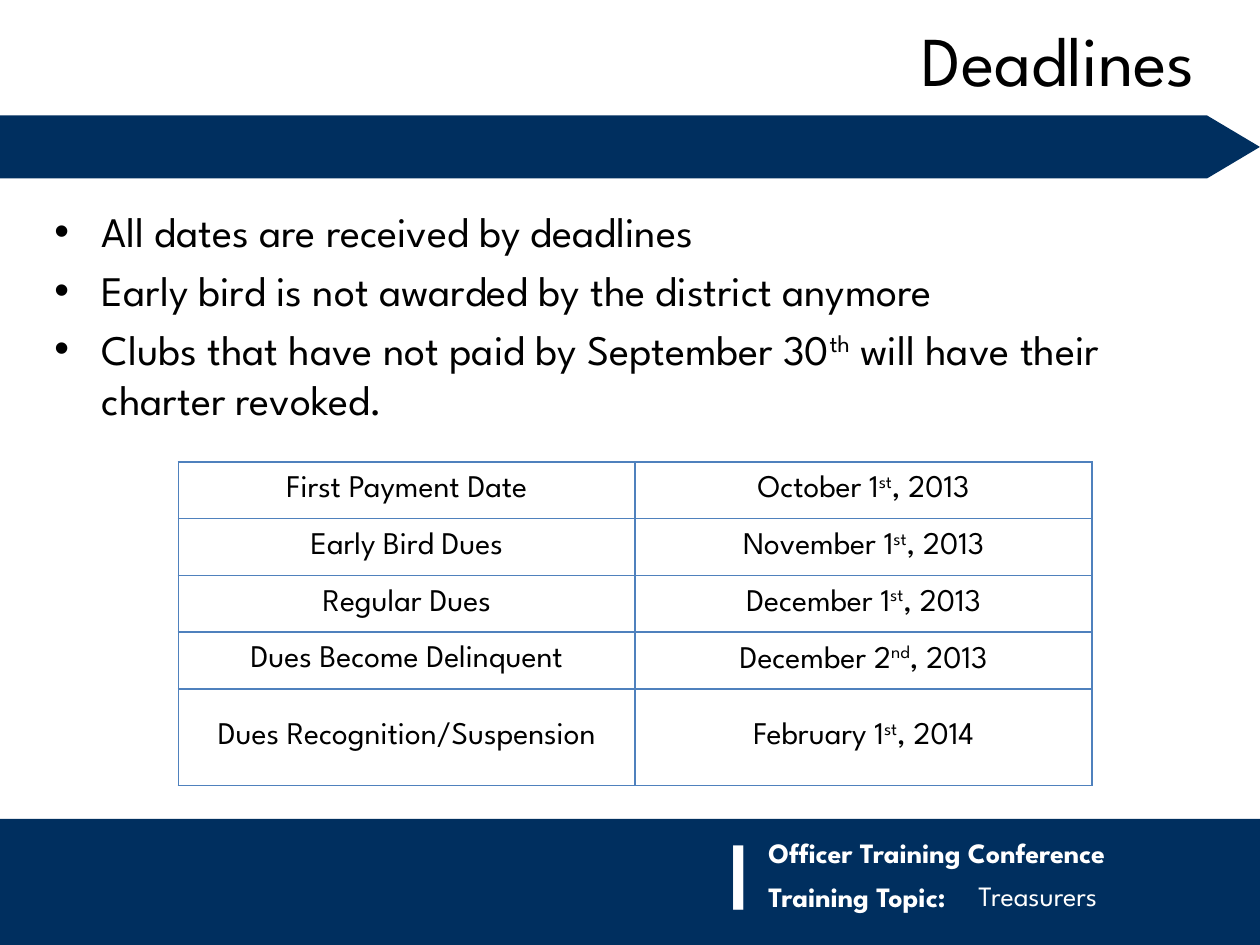
"""Build the treasurers' deadlines slide."""
import pptx
import pptx.dml.color
import pptx.enum.shapes
import pptx.enum.text
import pptx.oxml
import pptx.oxml.ns
import pptx.util

Pt = pptx.util.Pt
ALIGN = pptx.enum.text.PP_ALIGN
ANCHOR = pptx.enum.text.MSO_ANCHOR
SHAPE = pptx.enum.shapes.MSO_SHAPE
NAVY = pptx.dml.color.RGBColor(0x00, 0x2F, 0x5F)
BLUE = pptx.dml.color.RGBColor(0x4F, 0x81, 0xBD)
BLACK = pptx.dml.color.RGBColor(0, 0, 0)
WHITE = pptx.dml.color.RGBColor(255, 255, 255)
FONT = "League Spartan"

TITLE = "Deadlines"
BULLETS = [
    "All dates are received by deadlines",
    "Early bird is not awarded by the district anymore",
    "Clubs that have not paid by September 30^th^ will have their charter revoked.",
]
DEADLINES = [
    ("First Payment Date", "October 1^st^, 2013"),
    ("Early Bird Dues", "November 1^st^, 2013"),
    ("Regular Dues", "December 1^st^, 2013"),
    ("Dues Become Delinquent", "December 2^nd^, 2013"),
    ("Dues Recognition/Suspension", "February 1^st^, 2014"),
]
ROW_HEIGHTS = [32.4] * 4 + [55.4]
COLUMN_WIDTH = 261
BANDS = [
    (SHAPE.PENTAGON, (0, 66, 720, 36)),
    (SHAPE.RECTANGLE, (0, 468, 720, 72)),
]
FOOTER = [
    ("Training Topic:", (432, 499, 150, 26.6), 16, True, 0),
    ("|", (410.4, 467.3, 39.6, 60.5), 44, True, 0),
    ("Officer Training Conference", (432, 473.8, 264, 26.6), 16, True, 0),
    ("Treasurers", (552, 498.2, 114, 27.4), 16, False, 3.2),
]


def write(para, text, size, color=BLACK, bold=False):
    """Fill a paragraph, raising the parts held between carets."""
    for index, part in enumerate(text.split("^")):
        span = para.add_run()
        span.text = part
        span.font.name = FONT
        span.font.size = Pt(size)
        span.font.bold = bold
        span.font.color.rgb = color
        if index % 2:
            span.font._element.set("baseline", "30000")


def add_text_box(page, place):
    """Add an empty wrapping text box."""
    box = page.shapes.add_textbox(*map(Pt, place))
    box.text_frame.word_wrap = True
    return box


def add_bullet(para, indent):
    """Give a paragraph a hanging round bullet."""
    properties = para._p.get_or_add_pPr()
    properties.set("marL", str(Pt(indent)))
    properties.set("indent", str(-Pt(indent)))
    namespace = pptx.oxml.ns.nsdecls("a")
    properties.append(pptx.oxml.parse_xml(f'<a:buFont {namespace} typeface="Arial"/>'))
    properties.append(pptx.oxml.parse_xml(f'<a:buChar {namespace} char="•"/>'))


def add_borders(cell):
    """Draw a thin blue line on every side of a cell."""
    properties = cell._tc.get_or_add_tcPr()
    for index, side in enumerate(("lnL", "lnR", "lnT", "lnB")):
        properties.insert(index, pptx.oxml.parse_xml(
            f'<a:{side} {pptx.oxml.ns.nsdecls("a")} w="{Pt(1)}"><a:solidFill>'
            f'<a:srgbClr val="{BLUE}"/></a:solidFill></a:{side}>'))


def add_bands(page):
    """Draw the arrow band and the footer band."""
    for kind, place in BANDS:
        band = page.shapes.add_shape(kind, *map(Pt, place))
        band.shadow.inherit = False
        band.fill.solid()
        band.fill.fore_color.rgb = NAVY
        band.line.fill.background()
        if kind == SHAPE.PENTAGON:
            band.adjustments[0] = 0.84


def add_footer(page):
    """Write the footer lines."""
    for text, place, size, bold, gap in FOOTER:
        para = add_text_box(page, place).text_frame.paragraphs[0]
        para.space_before = Pt(gap)
        write(para, text, size, WHITE, bold)


def add_bullets(page):
    """Write the bullet list."""
    frame = add_text_box(page, (24, 114, 672, 126)).text_frame
    for index, text in enumerate(BULLETS):
        para = frame.add_paragraph() if index else frame.paragraphs[0]
        para.space_before = Pt(4.8)
        add_bullet(para, 27)
        write(para, text, 24)


def set_title(page):
    """Place and format the title."""
    title = page.shapes.title
    title.left, title.top, title.width, title.height = map(Pt, (246, 6, 444, 54))
    title.text_frame.vertical_anchor = ANCHOR.TOP
    para = title.text_frame.paragraphs[0]
    para.alignment = ALIGN.RIGHT
    para.space_before = Pt(8)
    write(para, TITLE, 40)


def add_deadlines(page):
    """Build the table of deadlines."""
    table = page.shapes.add_table(
        len(DEADLINES), 2, Pt(102), Pt(264), Pt(2 * COLUMN_WIDTH), Pt(sum(ROW_HEIGHTS))).table
    table.first_row = table.horz_banding = False
    for column in table.columns:
        column.width = Pt(COLUMN_WIDTH)
    for row, height, texts in zip(table.rows, ROW_HEIGHTS, DEADLINES):
        row.height = Pt(height)
        for cell, text in zip(row.cells, texts):
            cell.fill.background()
            cell.vertical_anchor = ANCHOR.MIDDLE
            add_borders(cell)
            para = cell.text_frame.paragraphs[0]
            para.alignment = ALIGN.CENTER
            write(para, text, 18)


def main():
    """Assemble and save the slide."""
    deck = pptx.Presentation()
    deck.slide_width, deck.slide_height = Pt(720), Pt(540)
    page = deck.slides.add_slide(deck.slide_layouts[5])
    add_bands(page)
    add_footer(page)
    add_bullets(page)
    set_title(page)
    add_deadlines(page)
    deck.save("out.pptx")


if __name__ == "__main__":
    main()
